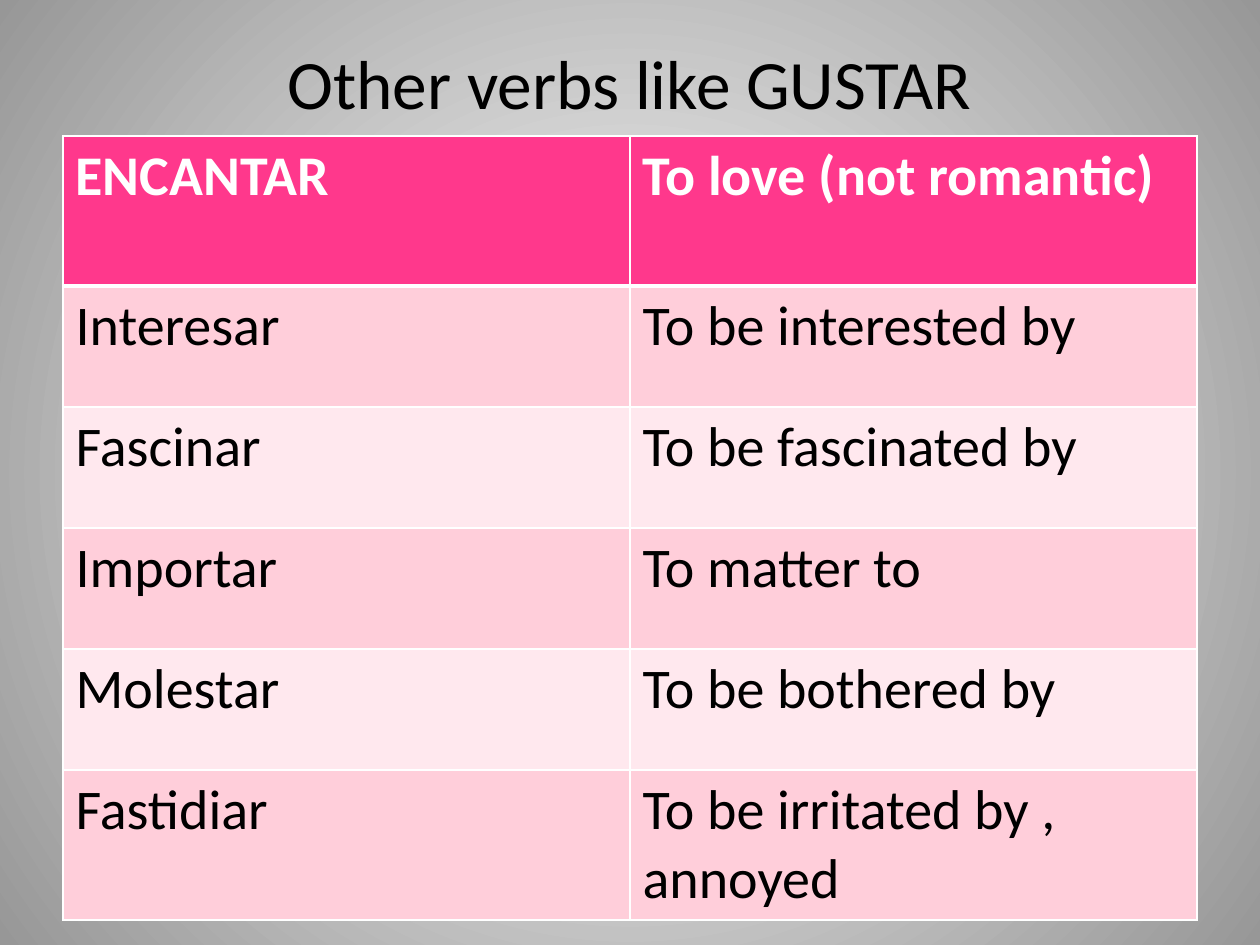
from dataclasses import dataclass

from lxml.etree import SubElement
from pptx import Presentation
from pptx.dml.color import RGBColor
from pptx.enum.text import MSO_ANCHOR, MSO_AUTO_SIZE, PP_ALIGN
from pptx.oxml.ns import qn
from pptx.util import Pt


@dataclass(frozen=True)
class Theme:
    font: str = "Calibri"
    title: float = 39.6
    body: int = 32
    ink: str = "000000"
    white: str = "FFFFFF"
    gray: str = "979797"
    head: str = "FF388C"
    bands: tuple = ("FFCEDA", "FFE8EE")
    thin: int = 1
    thick: int = 3


def px(n):
    return round(n * 914400 / 126)


class Deck:
    def __init__(self, theme, width, height):
        self.theme = theme
        self.file = Presentation()
        self.file.slide_width, self.file.slide_height = px(width), px(height)
        self.slide = self.file.slides.add_slide(self.file.slide_layouts[5])

    def style(self, frame, size, color, bold=False):
        for par in frame.paragraphs:
            font = par.font
            font.name, font.size, font.bold = self.theme.font, Pt(size), bold
            font.color.rgb = RGBColor.from_string(color)

    def glow(self, inner, outer):
        fill = self.slide.background.fill
        fill.gradient()
        for stop, color, pos in zip(fill.gradient_stops, (inner, outer), (0, 1)):
            stop.color.rgb = RGBColor.from_string(color)
            stop.position = pos
        # Swap the linear direction for a circle around the centre
        grad = self.slide.background._cSld.find(".//" + qn("a:gradFill"))
        grad.remove(grad.find(qn("a:lin")))
        ring = SubElement(grad, qn("a:path"), path="circle")
        SubElement(ring, qn("a:fillToRect"), dict.fromkeys("ltrb", "50000"))

    def title(self, text, left, top, width, height):
        box = self.slide.shapes.title
        box.left, box.top, box.width, box.height = map(px, (left, top, width, height))
        frame = box.text_frame
        frame.text = text
        frame.word_wrap = True
        frame.auto_size = MSO_AUTO_SIZE.NONE
        frame.vertical_anchor = MSO_ANCHOR.MIDDLE
        frame.paragraphs[0].alignment = PP_ALIGN.CENTER
        self.style(frame, self.theme.title, self.theme.ink)

    def border(self, cell, **sides):
        props = cell._tc.get_or_add_tcPr()
        for at, (side, width) in enumerate(sides.items()):
            line = SubElement(props, qn(f"a:ln{side}"), w=str(Pt(width)))
            paint = SubElement(line, qn("a:solidFill"))
            SubElement(paint, qn("a:srgbClr"), val=self.theme.white)
            props.insert(at, line)

    def table(self, rows, left, top, width, heights):
        look = self.theme
        cols = len(rows[0])
        grid = self.slide.shapes.add_table(
            len(rows), cols, px(left), px(top), px(width), px(sum(heights))).table
        for col in grid.columns:
            col.width = px(width // cols)
        for r, (words, height) in enumerate(zip(rows, heights)):
            grid.rows[r].height = px(height)
            head = r == 0
            fill = look.head if head else look.bands[(r - 1) % 2]
            for c, word in enumerate(words):
                cell = grid.cell(r, c)
                cell.text = word
                cell.fill.solid()
                cell.fill.fore_color.rgb = RGBColor.from_string(fill)
                self.style(cell.text_frame, look.body,
                           look.white if head else look.ink, head)
                self.border(cell, L=look.thin, R=look.thin,
                            T=look.thick if r == 1 else look.thin,
                            B=look.thick if head else look.thin)


def main():
    theme = Theme()
    deck = Deck(theme, 1260, 945)

    # Background and title
    deck.glow(theme.white, theme.gray)
    deck.title("Other verbs like GUSTAR", 63, 38, 1134, 88)

    # Verbs and their meanings
    verbs = [
        ("ENCANTAR", "To love (not romantic)"),
        ("Interesar", "To be interested by"),
        ("Fascinar", "To be fascinated by"),
        ("Importar", "To matter to"),
        ("Molestar", "To be bothered by"),
        ("Fastidiar", "To be irritated by , annoyed"),
    ]
    tall, short = 150, 121
    deck.table(verbs, 63, 136, 1134, [tall] + [short] * 4 + [tall])

    deck.file.save("out.pptx")


if __name__ == "__main__":
    main()
